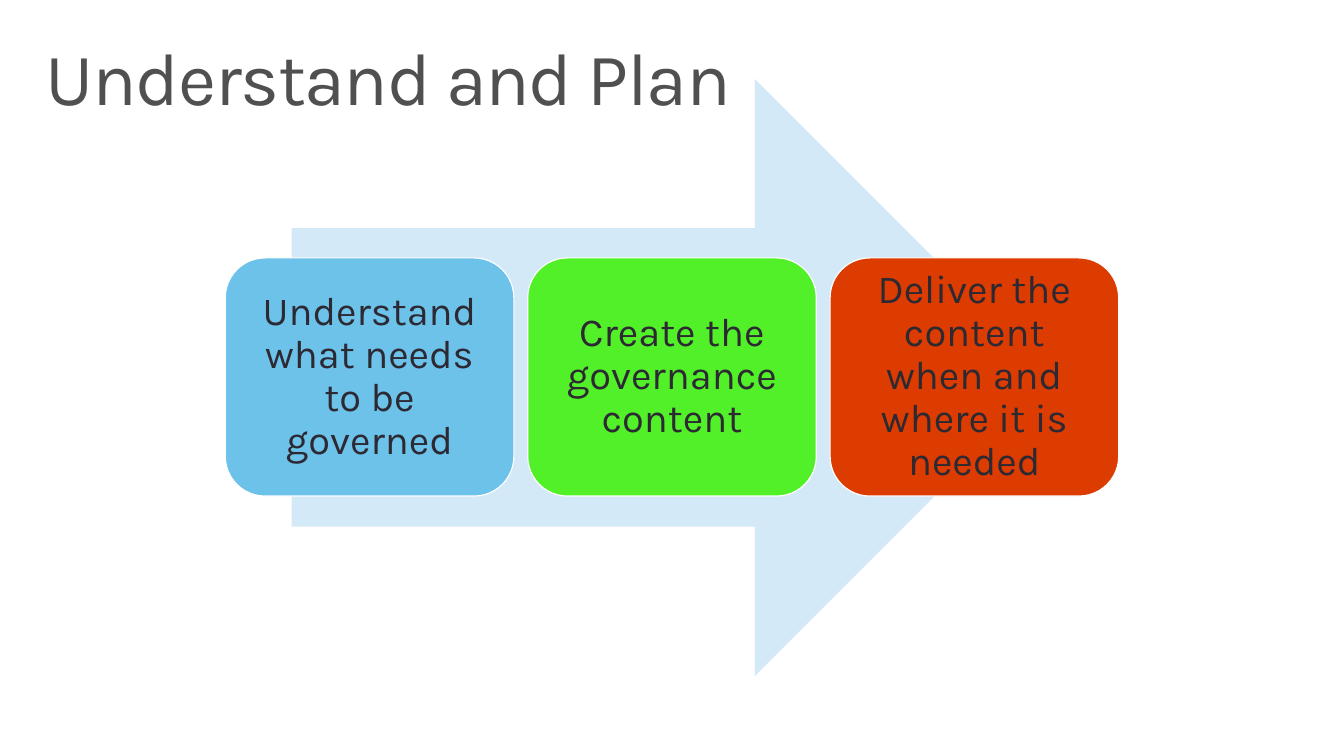
from pptx import Presentation
from pptx.dml.color import RGBColor
from pptx.enum.shapes import MSO_SHAPE
from pptx.enum.text import MSO_ANCHOR, MSO_AUTO_SIZE, PP_ALIGN
from pptx.util import Pt

ARROW, CARD = MSO_SHAPE.RIGHT_ARROW, MSO_SHAPE.ROUNDED_RECTANGLE
TOP, MIDDLE = MSO_ANCHOR.TOP, MSO_ANCHOR.MIDDLE
LEFT, CENTER = PP_ALIGN.LEFT, PP_ALIGN.CENTER
NO_FIT = MSO_AUTO_SIZE.NONE

PX = 9144
FONT = "Karla"
COLORS = {
    "background": "FFFFFF",
    "title": "505050",
    "text": "2C2933",
    "outline": "FFFFFF",
    "arrow": "D4E9F7",
    "understand": "6DC2E9",
    "create": "52F029",
    "deliver": "DC3C00",
}
STEPS = [
    ("Understand what needs to be governed", "understand"),
    ("Create the governance content", "create"),
    ("Deliver the content when and where it is needed", "deliver"),
]


def rgb(name):
    """Return the named colour."""
    return RGBColor.from_string(COLORS[name])


def emu(*lengths):
    """Convert px lengths to EMU."""
    return [length * PX for length in lengths]


def set_all(target, values):
    """Set each attribute of the target from a dict."""
    for name, value in values.items():
        setattr(target, name, value)


def write(sp, text, size, color, align, anchor, insets):
    """Write one formatted paragraph into a shape and return its run."""
    tf = sp.text_frame
    mx, my = emu(*insets)
    set_all(tf, {
        "word_wrap": True, "auto_size": NO_FIT, "vertical_anchor": anchor,
        "margin_left": mx, "margin_right": mx,
        "margin_top": my, "margin_bottom": my,
    })
    p = tf.paragraphs[0]
    set_all(p, {"alignment": align, "line_spacing": 0.9})
    r = p.add_run()
    r.text = text
    set_all(r.font, {"name": FONT, "size": Pt(size)})
    r.font.color.rgb = rgb(color)
    return r


def add_filled(s, kind, box, color):
    """Add a flat preset shape without an outline."""
    sp = s.shapes.add_shape(kind, *emu(*box))
    sp.shadow.inherit = False
    sp.fill.solid()
    sp.fill.fore_color.rgb = rgb(color)
    sp.line.fill.background()
    return sp


def add_title(s, box, text):
    """Place and fill the title placeholder."""
    sp = s.shapes.title
    set_all(sp, dict(zip(("left", "top", "width", "height"), emu(*box))))
    r = write(sp, text, 54, "title", LEFT, TOP, (16, 10))
    r.font._element.set("spc", "-100")


def add_process(s, box, steps):
    """Draw an arrow with a row of step cards across its middle."""
    x, y, w, h = box
    gap, inset = 14, 67
    card_w, card_h = (w - gap * (len(steps) - 1)) // len(steps), h * 2 // 5
    add_filled(s, ARROW, (x + inset, y, w - 2 * inset, h), "arrow")
    for i, (text, color) in enumerate(steps):
        card = (x + i * (card_w + gap), y + (h - card_h) // 2, card_w, card_h)
        sp = add_filled(s, CARD, card, color)
        sp.line.color.rgb = rgb("outline")
        sp.line.width = Pt(0.85)
        write(sp, text, 29, "text", CENTER, MIDDLE, (12, 12))


def main():
    """Build and save the slide."""
    prs = Presentation()
    prs.slide_width, prs.slide_height = emu(1360, 765)
    s = prs.slides.add_slide(prs.slide_layouts[5])
    s.background.fill.solid()
    s.background.fill.fore_color.rgb = rgb("background")
    add_process(s, (228, 80, 905, 604), STEPS)
    add_title(s, (30, 32, 1300, 100), "Understand and Plan")
    prs.save("out.pptx")


if __name__ == "__main__":
    main()
